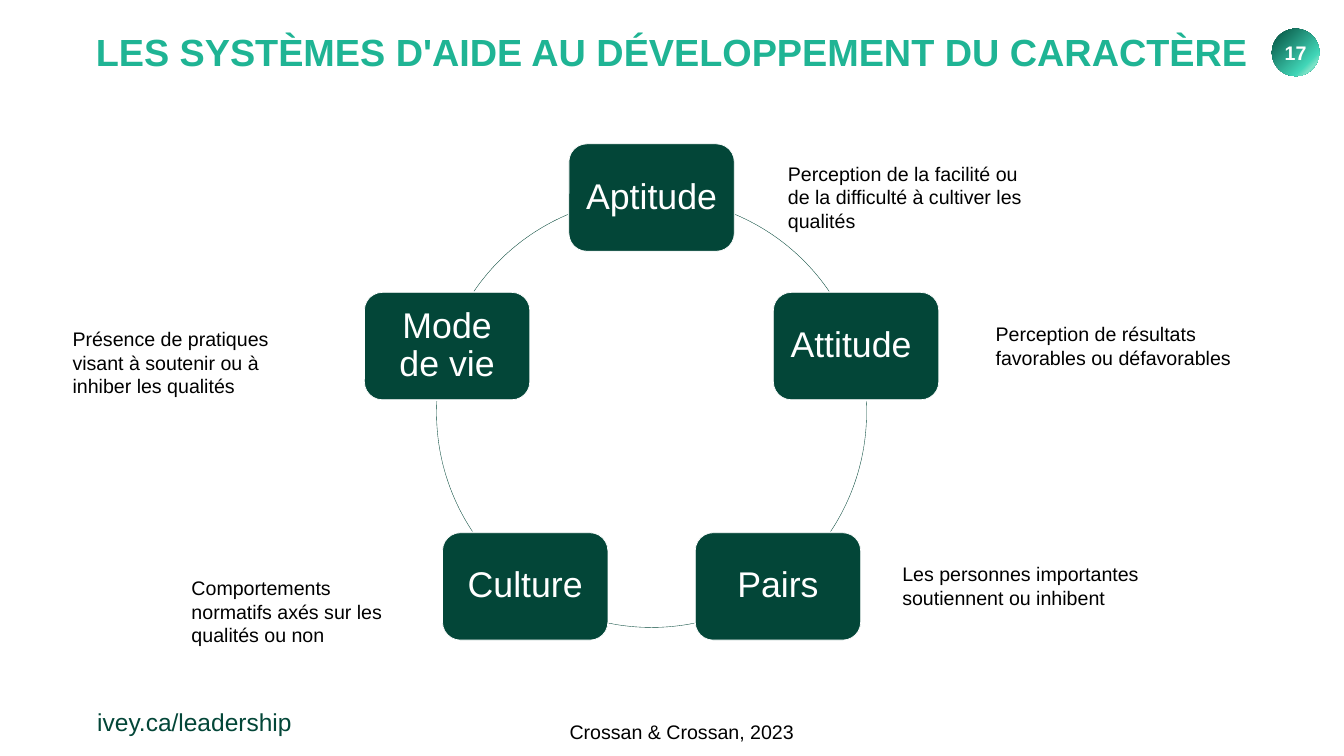
from dataclasses import dataclass
from math import cos, radians, sin

from lxml import etree
from pptx import Presentation
from pptx.dml.color import RGBColor
from pptx.enum.shapes import MSO_SHAPE
from pptx.enum.text import MSO_ANCHOR, PP_ALIGN
from pptx.oxml.ns import qn
from pptx.util import Inches, Pt


@dataclass(frozen=True)
class Theme:
    font: str = "Arial"
    green: str = "034638"
    teal: str = "1FB494"
    white: str = "FFFFFF"
    black: str = "000000"
    badge: tuple = ((0, "024C3C"), (74, "42D6B8"), (83, "7FE3C8"), (100, "28CCAC"))
    title: int = 54
    node: int = 51
    site: int = 35
    body: int = 28


T = Theme()

# Ring nodes, clockwise from the top; Attitude ends in an em space that wraps to a second line
NODES = ["Aptitude", "Attitude ", "Pairs", "Culture", "Mode de vie"]

# Visible arcs between nodes: start and end in degrees, clockwise from the right
ARCS = [(292.9, 325.7), (357, 33.6), (78.5, 101.5), (146.4, 183), (214.3, 247.1)]

NOTES = [
    ((15.53, 3.16, 5.15, 1.04),
     "Perception de la facilité ou de la difficulté à cultiver les qualités"),
    ((19.65, 6.34, 5.15, 1.04), "Perception de résultats favorables ou défavorables"),
    ((17.8, 11.1, 5.15, 1.04), "Les personnes importantes soutiennent ou inhibent"),
    ((3.7, 11.38, 4.02, 1.04), "Comportements normatifs axés sur les qualités ou non"),
    ((1.34, 6.44, 5.15, 1.04),
     "Présence de pratiques visant à soutenir ou à inhiber les qualités"),
]


def rgb(color):
    return RGBColor.from_string(color)


def write(sp, text, size=T.body, color=T.black, bold=False, align=PP_ALIGN.LEFT,
          anchor=MSO_ANCHOR.TOP, wrap=True, inset=(0.1, 0.05), spacing=None):
    tf = sp.text_frame
    tf.word_wrap = wrap
    tf.vertical_anchor = anchor
    tf.margin_left = tf.margin_right = Inches(inset[0])
    tf.margin_top = tf.margin_bottom = Inches(inset[1])
    p = tf.paragraphs[0]
    p.alignment = align
    p.line_spacing = spacing
    r = p.add_run()
    r.text = text
    r.font.name = T.font
    r.font.size = Pt(size)
    r.font.bold = bold
    r.font.color.rgb = rgb(color)


def add_text(s, box, text, **fmt):
    write(s.shapes.add_textbox(*map(Inches, box)), text, **fmt)


def add_shape(s, kind, box):
    sp = s.shapes.add_shape(kind, *map(Inches, box))
    sp.shadow.inherit = False
    return sp


def add_badge(s, box, number):
    sp = add_shape(s, MSO_SHAPE.OVAL, box)
    sp.line.fill.background()
    sp.fill.gradient()
    grad = sp._element.spPr.find(qn("a:gradFill"))
    stops = grad.find(qn("a:gsLst"))
    for stop in list(stops):
        stops.remove(stop)
    for pos, color in T.badge:
        gs = etree.SubElement(stops, qn("a:gs"), pos=str(pos * 1000))
        etree.SubElement(gs, qn("a:srgbClr"), val=color)
    grad.find(qn("a:lin")).set("ang", str(45 * 60000))
    write(sp, number, color=T.white, bold=True, align=PP_ALIGN.CENTER,
          anchor=MSO_ANCHOR.MIDDLE, wrap=False)


def add_cycle(s, box, node_w=3.28, node_h=2.13):
    left, top, size, _ = box
    radius = size / 2
    # Ring arcs
    for arc in ARCS:
        sp = add_shape(s, MSO_SHAPE.ARC, box)
        for i, angle in enumerate(arc):
            sp.adjustments[i] = angle * 0.6  # 60000ths of a degree over 100000
        sp.fill.background()
        sp.line.color.rgb = rgb(T.green)
        sp.line.width = Pt(0.5)
    # Nodes at equal angles
    for i, label in enumerate(NODES):
        angle = radians(360 / len(NODES) * i - 90)
        x = left + radius + radius * cos(angle) - node_w / 2
        y = top + radius + radius * sin(angle) - node_h / 2
        sp = add_shape(s, MSO_SHAPE.ROUNDED_RECTANGLE, (x, y, node_w, node_h))
        sp.fill.solid()
        sp.fill.fore_color.rgb = rgb(T.green)
        sp.line.color.rgb = rgb(T.white)
        sp.line.width = Pt(1)
        write(sp, label, size=T.node, color=T.white, align=PP_ALIGN.CENTER,
              anchor=MSO_ANCHOR.MIDDLE, inset=(0.21, 0.21), spacing=0.9)


def main():
    prs = Presentation()
    prs.slide_width, prs.slide_height = Inches(26.66), Inches(15)
    s = prs.slides.add_slide(prs.slide_layouts[6])

    # Header
    add_badge(s, (25.23, 0.57, 0.94, 0.94), "17")
    add_text(s, (1.69, 0.53, 23.28, 1.01),
             "LES SYSTÈMES D'AIDE AU DÉVELOPPEMENT DU CARACTÈRE",
             size=T.title, color=T.teal, bold=True, align=PP_ALIGN.CENTER, wrap=False)

    # Cycle and its notes
    add_cycle(s, (8.66, 3.92, 8.53, 8.53))
    for box, text in NOTES:
        add_text(s, box, text)

    # Footer
    add_text(s, (1.83, 13.98, 10.93, 0.69), "ivey.ca/leadership",
             size=T.site, color=T.green)
    add_text(s, (11.2, 14.23, 5.15, 0.57), "Crossan & Crossan, 2023")

    prs.save("out.pptx")


if __name__ == "__main__":
    main()
